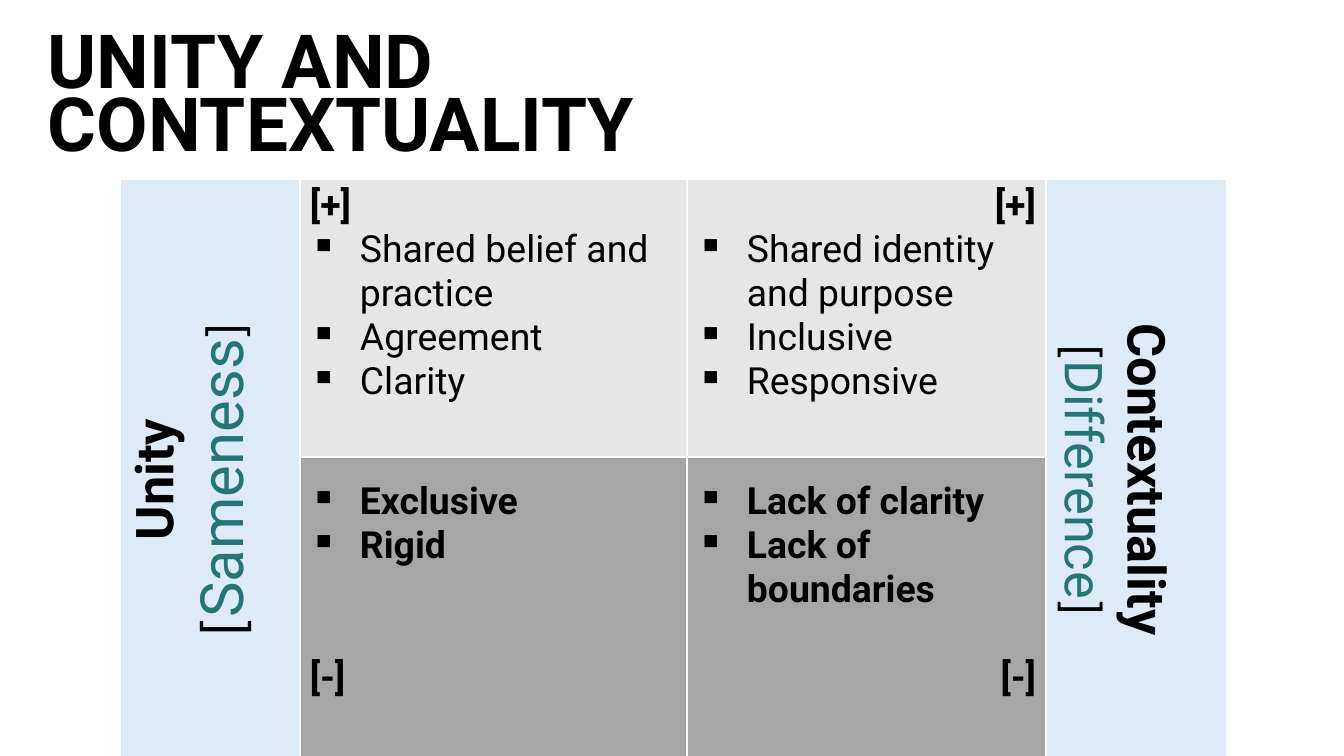
from lxml.etree import SubElement as Sub, Element
from pptx import Presentation as Deck
from pptx.dml.color import RGBColor as Rgb
from pptx.enum.text import MSO_ANCHOR as Anchor, PP_ALIGN as Align
from pptx.oxml.ns import qn
from pptx.util import Pt

PX = 914400 / 134.4
BLACK = Rgb(0x00, 0x00, 0x00)
TEAL = Rgb(0x24, 0x75, 0x77)
BLUE = Rgb(0xDE, 0xEB, 0xF7)
LIGHT = Rgb(0xE7, 0xE6, 0xE6)
GREY = Rgb(0xA6, 0xA6, 0xA6)
WHITE = Rgb(0xFF, 0xFF, 0xFF)
COLS = [180, 387, 359, 181]
ROWS = [278, 300]
BASE = {"name": "Roboto", "size": Pt(20), "bold": False}


def px(n):
    return round(n * PX)


def put(obj, vals):
    for key, val in vals.items():
        setattr(obj, key, val)


def pad(obj, top=5):
    put(obj, {"margin_left": px(10), "margin_right": px(10),
              "margin_top": px(top), "margin_bottom": px(5)})


def add_run(para, text, color=BLACK, **form):
    run = para.add_run()
    run.text = text
    put(run.font, {**BASE, **form})
    run.font.color.rgb = color


def next_para(frame):
    first = frame.paragraphs[0]
    return frame.add_paragraph() if first.runs else first


def add_mark(frame, text, align, gap=0):
    para = next_para(frame)
    para.alignment = align
    if gap:
        para.space_before = Pt(gap)
    add_run(para, text, bold=True)


def add_list(frame, items, bold):
    for item in items:
        para = next_para(frame)
        props = para._p.get_or_add_pPr()
        props.set("marL", str(px(50)))
        props.set("indent", str(-px(50)))
        Sub(props, qn("a:buChar"), char="▪")
        add_run(para, item, bold=bold)


def style_cell(cell, color, top=5):
    pad(cell, top)
    cell.fill.solid()
    cell.fill.fore_color.rgb = color
    props = cell._tc.get_or_add_tcPr()
    for spot, side in enumerate(("lnL", "lnR", "lnT", "lnB")):
        line = Element(qn("a:" + side), w=str(Pt(1)))
        Sub(Sub(line, qn("a:solidFill")), qn("a:srgbClr"), val=str(WHITE))
        props.insert(spot, line)


def fill_side(grid, col, turn, head, word, size):
    for row in range(2):
        style_cell(grid.cell(row, col), BLUE)
    cell = grid.cell(0, col)
    cell.merge(grid.cell(1, col))
    cell._tc.get_or_add_tcPr().set("vert", turn)
    frame = cell.text_frame
    add_mark(frame, head, Align.CENTER)
    frame.paragraphs[0].runs[0].font.size = Pt(28)
    para = next_para(frame)
    para.alignment = Align.CENTER
    add_run(para, "[", name="Calibri", size=Pt(size))
    add_run(para, word, TEAL, size=Pt(size))
    add_run(para, "]", name="Calibri", size=Pt(28))


def fill_pair(grid, col, align, pros, cons, gap):
    top, low = grid.cell(0, col), grid.cell(1, col)
    style_cell(top, LIGHT)
    add_mark(top.text_frame, "[+]", align)
    add_list(top.text_frame, pros, False)
    style_cell(low, GREY, 23)
    add_list(low.text_frame, cons, True)
    add_mark(low.text_frame, "[-]", align, gap)


def add_grid(slide, left, top):
    box = map(px, (left, top, sum(COLS), sum(ROWS)))
    grid = slide.shapes.add_table(len(ROWS), len(COLS), *box).table
    put(grid, {"first_row": False, "horz_banding": False})
    for col, wide in zip(grid.columns, COLS):
        col.width = px(wide)
    for row, high in zip(grid.rows, ROWS):
        row.height = px(high)
    fill_side(grid, 0, "vert270", "Unity", "Sameness", 32)
    fill_pair(grid, 1, Align.LEFT,
              ["Shared belief and practice", "Agreement", "Clarity"],
              ["Exclusive", "Rigid"], 47)
    fill_pair(grid, 2, Align.RIGHT,
              ["Shared identity and purpose", "Inclusive", "Responsive"],
              ["Lack of clarity", "Lack of boundaries"], 23.5)
    fill_side(grid, 3, "vert", "Contextuality", "Difference", 28)


def add_title(slide, left, top, wide, high):
    box = slide.shapes.add_textbox(*map(px, (left, top, wide, high)))
    frame = box.text_frame
    pad(frame)
    put(frame, {"word_wrap": True, "vertical_anchor": Anchor.MIDDLE})
    para = frame.paragraphs[0]
    para.line_spacing = 0.7
    for spot, word in enumerate(("UNITY AND", "CONTEXTUALITY")):
        if spot:
            para.add_line_break()
        add_run(para, word, size=Pt(40), bold=True)


def main():
    deck = Deck()
    put(deck, {"slide_width": px(1344), "slide_height": px(756)})
    slide = deck.slides.add_slide(deck.slide_layouts[6])
    add_grid(slide, 120, 179)
    add_title(slide, 38, 71, 948, 60)
    deck.save("out.pptx")


if __name__ == "__main__":
    main()
